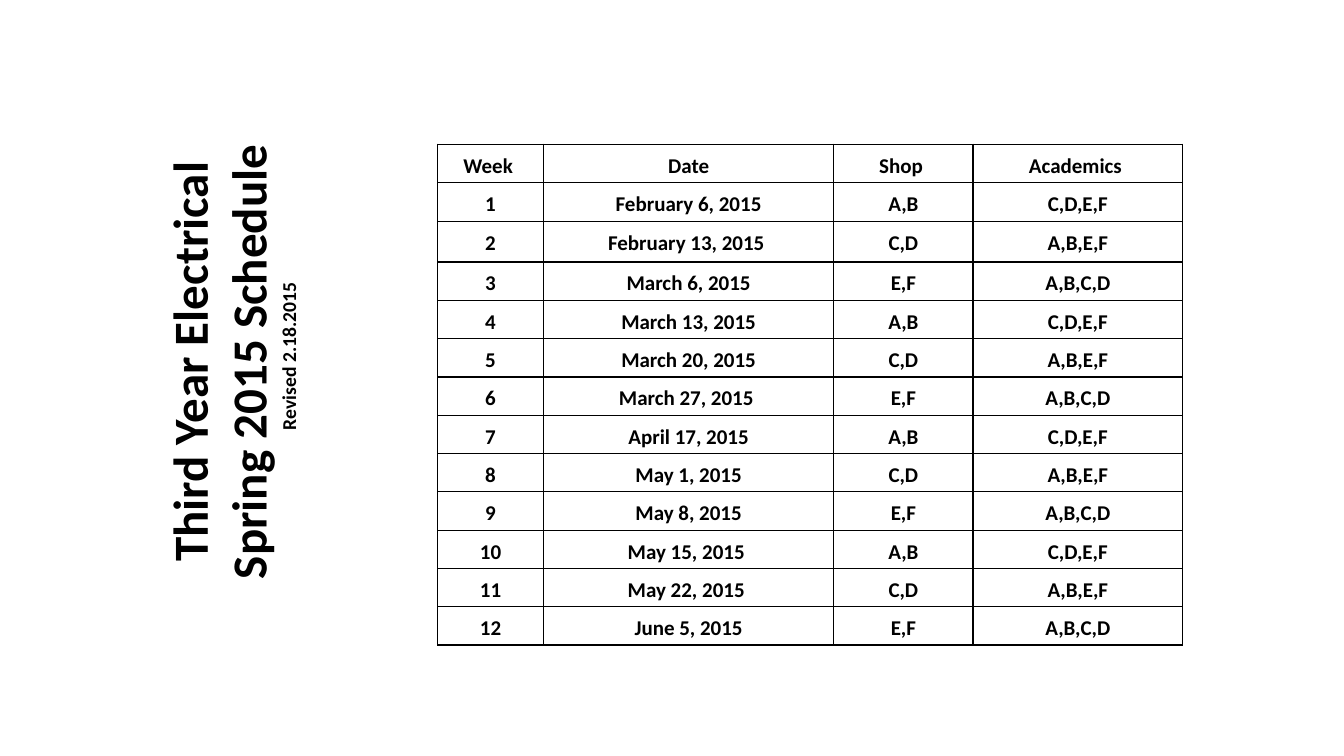
from lxml import etree
from pptx import Presentation
from pptx.dml.color import RGBColor as RGB
from pptx.enum.text import MSO_ANCHOR as ANCHOR, MSO_AUTO_SIZE as AUTO, PP_ALIGN as ALIGN
from pptx.oxml.ns import qn
from pptx.util import Inches, Pt

# Content
TITLE = [("Third Year Electrical ", "title"), ("Spring 2015 Schedule ", "title"),
         ("Revised 2.18.2015", "note")]
HEADER = ("Week ", "Date", "Shop ", "Academics ")
DATES = ["February 6, 2015", "February 13, 2015 ", "March 6, 2015", "March 13, 2015",
         "March 20, 2015", "March 27, 2015 ", "April 17, 2015", "May 1, 2015",
         "May 8, 2015", "May 15, 2015 ", "May 22, 2015 ", "June 5, 2015"]
ROTATION = [("A,B", "C,D,E,F"), ("C,D", "A,B,E,F"), ("E,F", "A,B,C,D")]  # shop, academics

# Theme and layout
THEME = {"font": "Calibri", "text": RGB(0, 0, 0), "fill": RGB(255, 255, 255),
         "border": "000000", "border_width": Pt(1),
         "size": {"title": Pt(35), "note": Pt(14), "cell": Pt(15)}}
TITLE_BOX = (-1.53, 2.78, 7.62, 1.51)
TABLE_AT = (4.34, 1.43)
COL_WIDTHS = (1.05, 2.88, 1.38, 2.08)
ROW_HEIGHT = 0.38
TALL_ROWS = {1: 0.39, 2: 0.4}
CELL_MARGIN = Inches(0.04)


def set_all(obj, **values):
    for name, value in values.items():
        setattr(obj, name, value)


def write(p, text, size):
    p.alignment = ALIGN.CENTER
    r = p.add_run()
    r.text = text
    set_all(r.font, name=THEME["font"], size=THEME["size"][size], bold=True)
    r.font.color.rgb = THEME["text"]


def add_borders(cell):
    tc_pr = cell._tc.get_or_add_tcPr()
    for i, side in enumerate(("lnL", "lnR", "lnT", "lnB")):
        ln = etree.Element(qn(f"a:{side}"), w=str(THEME["border_width"]))
        fill = etree.SubElement(ln, qn("a:solidFill"))
        etree.SubElement(fill, qn("a:srgbClr"), val=THEME["border"])
        tc_pr.insert(i, ln)


def add_title(s):
    sp = s.shapes.title
    left, top, width, height = map(Inches, TITLE_BOX)
    set_all(sp, left=left, top=top, width=width, height=height, rotation=270)
    tf = sp.text_frame
    set_all(tf, word_wrap=True, auto_size=AUTO.SHAPE_TO_FIT_TEXT, vertical_anchor=ANCHOR.TOP)
    for i, (text, size) in enumerate(TITLE):
        write(tf.add_paragraph() if i else tf.paragraphs[0], text, size)


def add_schedule(s):
    rows = [HEADER]
    for i, date in enumerate(DATES):
        rows.append((str(i + 1), date, *ROTATION[i % len(ROTATION)]))
    heights = [TALL_ROWS.get(i, ROW_HEIGHT) for i in range(len(rows))]
    frame = s.shapes.add_table(len(rows), len(HEADER), *map(Inches, TABLE_AT),
                               Inches(sum(COL_WIDTHS)), Inches(sum(heights)))
    table = frame.table
    set_all(table, first_row=False, horz_banding=False)
    for col, width in zip(table.columns, COL_WIDTHS):
        col.width = Inches(width)
    for row, height, texts in zip(table.rows, heights, rows):
        row.height = Inches(height)
        for cell, text in zip(row.cells, texts):
            set_all(cell, margin_left=CELL_MARGIN, margin_right=CELL_MARGIN,
                    margin_top=CELL_MARGIN, margin_bottom=CELL_MARGIN)
            cell.fill.solid()
            cell.fill.fore_color.rgb = THEME["fill"]
            add_borders(cell)
            p = cell.text_frame.paragraphs[0]
            set_all(p, line_spacing=1.19, space_after=Pt(6))
            write(p, text, "cell")


def main():
    prs = Presentation()
    set_all(prs, slide_width=Inches(13.33), slide_height=Inches(7.5))
    s = prs.slides.add_slide(prs.slide_layouts.get_by_name("Title Only"))
    add_title(s)
    add_schedule(s)
    prs.save("out.pptx")


if __name__ == "__main__":
    main()
